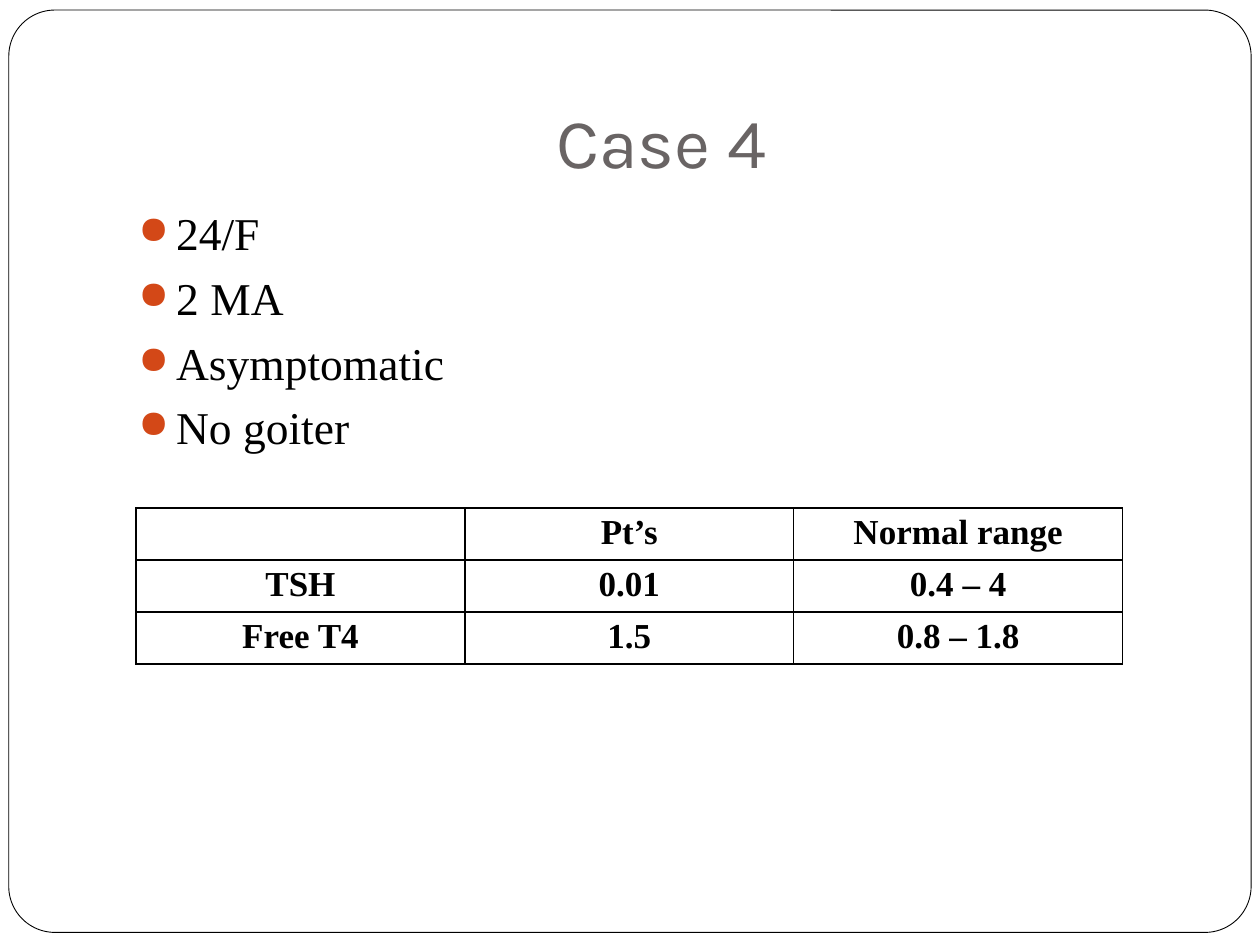
from lxml.etree import SubElement
from pptx import Presentation
from pptx.dml.color import RGBColor
from pptx.enum.shapes import MSO_SHAPE
from pptx.enum.text import MSO_ANCHOR, PP_ALIGN
from pptx.oxml.ns import qn
from pptx.util import Inches, Pt

BLACK = RGBColor(0x00, 0x00, 0x00)
WHITE = RGBColor(0xFF, 0xFF, 0xFF)
GRAY = RGBColor(0x69, 0x64, 0x64)
ORANGE = RGBColor(0xD3, 0x48, 0x17)

FINDINGS = ["24/F", "2 MA", "Asymptomatic", "No goiter"]
LABS = [
    ["", "Pt’s", "Normal range"],
    ["TSH", "0.01", "0.4 – 4"],
    ["Free T4", "1.5", "0.8 – 1.8"],
]


class CaseSlide:
    """Builds a framed case slide in one consistent style."""

    title_font = "Karla"
    body_font = "Times New Roman"

    def __init__(self, prs):
        self.s = prs.slides.add_slide(prs.slide_layouts[5])

    def style(self, p, font, size, color, bold=False):
        for r in p.runs:
            r.font.name = font
            r.font.size = Pt(size)
            r.font.color.rgb = color
            r.font.bold = bold

    def frame(self, left, top, width, height):
        sp = self.s.shapes.add_shape(
            MSO_SHAPE.ROUNDED_RECTANGLE,
            Inches(left), Inches(top), Inches(width), Inches(height))
        sp.adjustments[0] = 0.05
        sp.shadow.inherit = False
        sp.fill.solid()
        sp.fill.fore_color.rgb = WHITE
        sp.line.color.rgb = BLACK
        sp.line.width = Pt(0.5)
        sp.element.getparent().insert(2, sp.element)

    def title(self, text, left, top, width, height):
        sp = self.s.shapes.title
        sp.left, sp.top = Inches(left), Inches(top)
        sp.width, sp.height = Inches(width), Inches(height)
        tf = sp.text_frame
        tf.text = text
        tf.vertical_anchor = MSO_ANCHOR.BOTTOM
        tf.margin_bottom = Inches(0.1)
        p = tf.paragraphs[0]
        p.alignment = PP_ALIGN.CENTER
        self.style(p, self.title_font, 40, GRAY)

    def bullets(self, items, left, top, width, height):
        sp = self.s.shapes.add_textbox(
            Inches(left), Inches(top), Inches(width), Inches(height))
        tf = sp.text_frame
        tf.word_wrap = True
        tf.text = "\n".join(items)
        for p in tf.paragraphs:
            p.space_before = Pt(5.8)
            self.style(p, self.body_font, 26, BLACK)
            self.bullet(p)

    def bullet(self, p):
        pPr = p._p.get_or_add_pPr()
        pPr.set("marL", str(Inches(0.3)))
        pPr.set("indent", str(Inches(-0.3)))
        color = SubElement(pPr, qn("a:buClr"))
        SubElement(color, qn("a:srgbClr"), val=str(ORANGE))
        SubElement(pPr, qn("a:buSzPct"), val="85000")
        SubElement(pPr, qn("a:buChar"), char="●")

    def table(self, rows, left, top, col_width, row_height):
        n_rows, n_cols = len(rows), len(rows[0])
        table = self.s.shapes.add_table(
            n_rows, n_cols, Inches(left), Inches(top),
            Inches(col_width * n_cols), Inches(row_height * n_rows)).table
        table.first_row = table.horz_banding = False
        for col in table.columns:
            col.width = Inches(col_width)
        for row, texts in zip(table.rows, rows):
            row.height = Inches(row_height)
            for cell, text in zip(row.cells, texts):
                self.cell(cell, text)

    def cell(self, cell, text):
        cell.text = text
        cell.margin_top = cell.margin_bottom = Inches(0.04)
        p = cell.text_frame.paragraphs[0]
        p.alignment = PP_ALIGN.CENTER
        self.style(p, self.body_font, 20, BLACK, bold=True)
        tcPr = cell._tc.get_or_add_tcPr()
        for side in ("L", "R", "T", "B"):
            ln = SubElement(tcPr, qn(f"a:ln{side}"), w=str(Pt(1)))
            fill = SubElement(ln, qn("a:solidFill"))
            SubElement(fill, qn("a:srgbClr"), val=str(BLACK))
        cell.fill.background()


def main():
    prs = Presentation()
    prs.slide_width, prs.slide_height = Inches(10), Inches(7.5)
    slide = CaseSlide(prs)
    slide.frame(0.07, 0.08, 9.86, 7.32)
    slide.title("Case 4", 1, 0.3, 8.5, 1.25)
    slide.bullets(FINDINGS, 1, 1.58, 8.5, 5)
    slide.table(LABS, 1.08, 4.03, 2.61, 0.41)
    prs.save("out.pptx")


if __name__ == "__main__":
    main()
